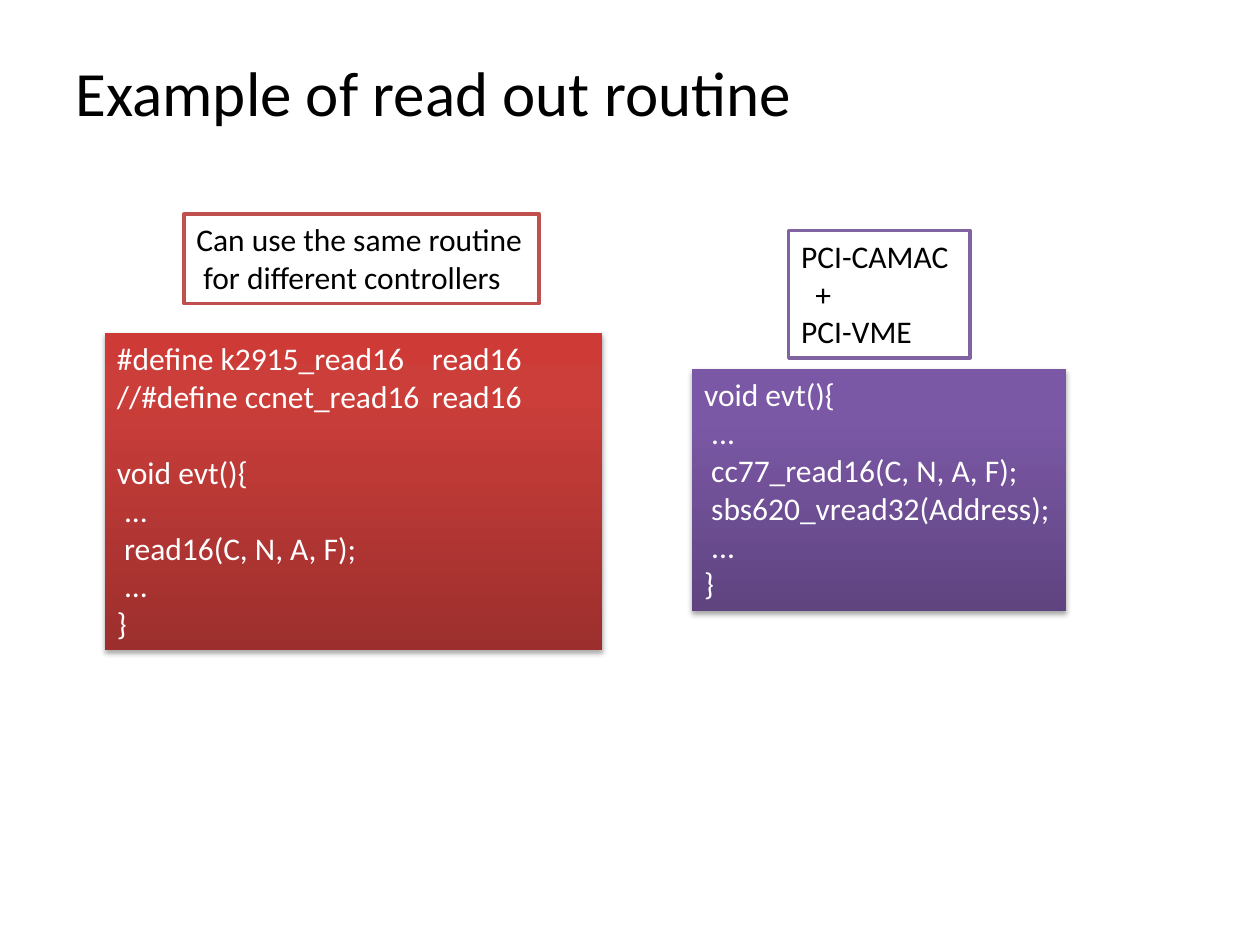
"""Build the slide that compares two read out routines."""
from copy import deepcopy

from lxml import etree
from pptx import Presentation
from pptx import util as u
from pptx.dml.color import RGBColor
from pptx.enum import shapes, text
from pptx.oxml import parse_xml
from pptx.oxml.ns import nsdecls, qn

BLACK = RGBColor(0x00, 0x00, 0x00)
WHITE = RGBColor(0xFF, 0xFF, 0xFF)
RED = RGBColor(0xC0, 0x50, 0x4D)
PURPLE = RGBColor(0x80, 0x64, 0xA2)
RED_FADE = [RGBColor(0x9C, 0x2F, 0x2D), RGBColor(0xCB, 0x3E, 0x3A), RGBColor(0xCE, 0x3B, 0x37)]
PURPLE_FADE = [RGBColor(0x5F, 0x44, 0x80), RGBColor(0x7B, 0x58, 0xA6), RGBColor(0x7C, 0x57, 0xA8)]
FADE_POSITIONS = [0, 0.8, 1]
FRAME = {
    "word_wrap": False,
    "auto_size": text.MSO_AUTO_SIZE.SHAPE_TO_FIT_TEXT,
    "vertical_anchor": text.MSO_ANCHOR.TOP,
}
SHADOW = (
    f'<a:effectLst {nsdecls("a")}><a:outerShdw blurRad="{u.Pt(3.1)}" dist="{u.Pt(1.8)}" '
    'dir="5400000" rotWithShape="0"><a:srgbClr val="000000"><a:alpha val="35000"/>'
    '</a:srgbClr></a:outerShdw></a:effectLst>'
)


def write_lines(frame, lines, size, color):
    for index, line in enumerate(lines):
        paragraph = frame.add_paragraph() if index else frame.paragraphs[0]
        paragraph.alignment = text.PP_ALIGN.LEFT
        run = paragraph.add_run()
        run.text = line
        for name, value in {"name": "Calibri", "size": u.Pt(size)}.items():
            setattr(run.font, name, value)
        run.font.color.rgb = color


def add_panel(slide, place, lines, color):
    panel = slide.shapes.add_shape(shapes.MSO_SHAPE.RECTANGLE, *map(u.Inches, place))
    panel.shadow.inherit = False
    for name, value in FRAME.items():
        setattr(panel.text_frame, name, value)
    write_lines(panel.text_frame, lines, 18, color)
    return panel


deck = Presentation()
deck.slide_width, deck.slide_height = u.Inches(10), u.Inches(7.5)
slide = deck.slides.add_slide(deck.slide_layouts[5])

title = slide.shapes.title
for side, length in {"left": 0.5, "top": 0.3, "width": 9, "height": 0.85}.items():
    setattr(title, side, u.Inches(length))
title.text_frame.vertical_anchor = text.MSO_ANCHOR.MIDDLE
write_lines(title.text_frame, ["Example of read out routine"], 36, BLACK)

shared_routine = [
    "#define k2915_read16\tread16",
    "//#define ccnet_read16\tread16",
    "void evt(){",
    " ...",
    " read16(C, N, A, F);",
    " ...",
    "}",
]
mixed_routine = [
    "void evt(){",
    " ...",
    " cc77_read16(C, N, A, F);",
    " sbs620_vread32(Address);",
    " ...",
    "}",
]
routines = []
for place, lines, fade in [
    ((0.83, 2.64, 3.95, 2.52), shared_routine, RED_FADE),
    ((5.49, 2.93, 2.97, 1.92), mixed_routine, PURPLE_FADE),
]:
    routine = add_panel(slide, place, lines, WHITE)
    routine.line.fill.background()
    routine.fill.gradient()
    routine.fill.gradient_angle = 90
    properties = routine.fill._xPr
    stop_list = properties.find(qn("a:gradFill")).find(qn("a:gsLst"))
    stop_list.insert(1, deepcopy(stop_list[0]))
    for stop, position, color in zip(stop_list, FADE_POSITIONS, fade):
        stop.set("pos", str(round(position * 100000)))
        for old_color in list(stop):
            stop.remove(old_color)
        etree.SubElement(stop, qn("a:srgbClr")).set("val", str(color))
    properties.replace(properties.find(qn("a:effectLst")), parse_xml(SHADOW))
    routines.append(routine)
routines[0].text_frame.paragraphs[2].space_before = u.Pt(22)

for place, lines, color in [
    ((6.26, 1.83, 1.44, 1.01), ["PCI-CAMAC", "  +", "PCI-VME"], PURPLE),
    ((1.46, 1.7, 2.82, 0.71), ["Can use the same routine", " for different controllers"], RED),
]:
    caption = add_panel(slide, place, lines, BLACK)
    caption.fill.solid()
    caption.fill.fore_color.rgb = WHITE
    caption.line.color.rgb = color
    caption.line.width = u.Pt(2)

deck.save("out.pptx")
